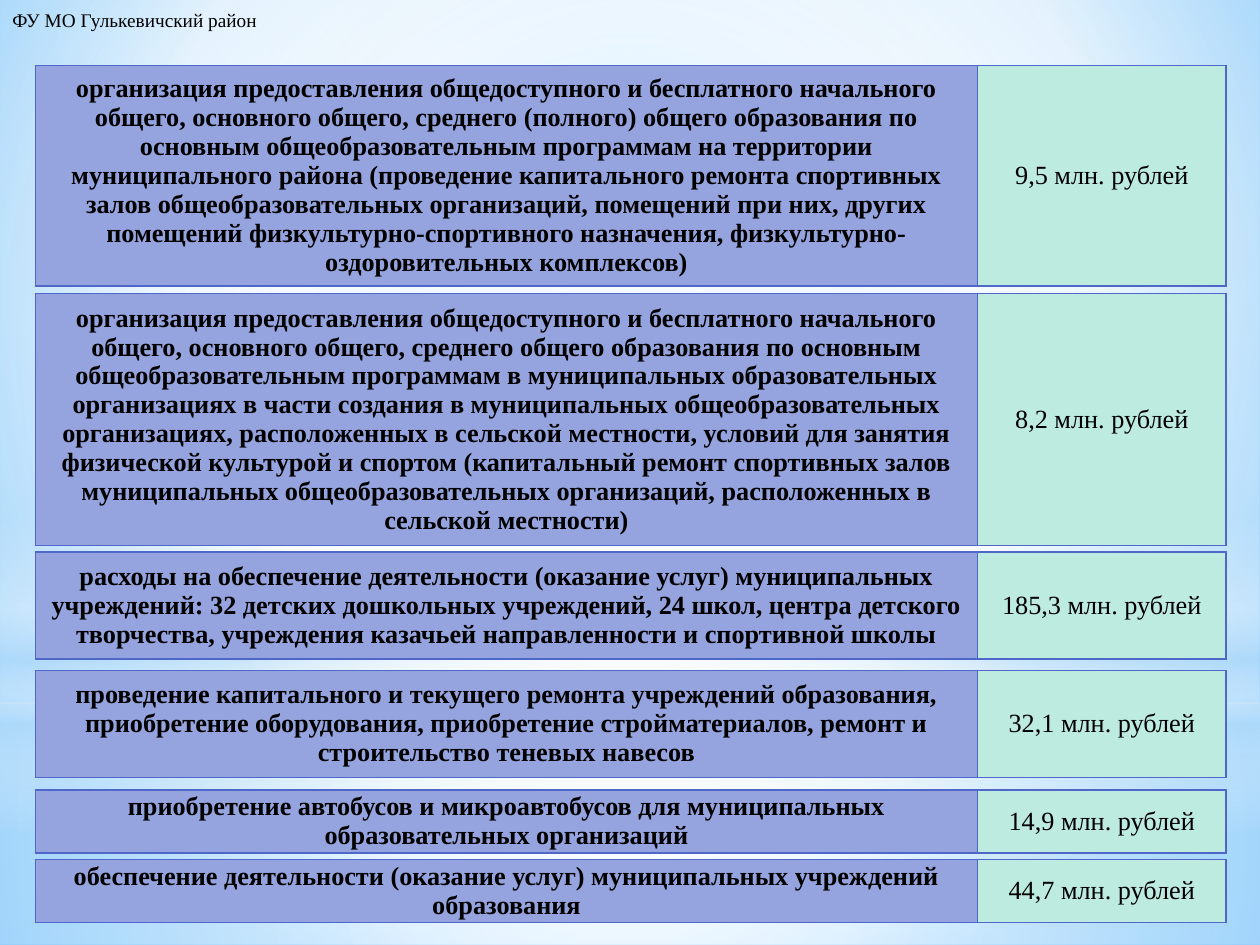
from dataclasses import dataclass

from lxml import etree
from pptx import Presentation
from pptx.dml.color import RGBColor
from pptx.enum.shapes import MSO_SHAPE
from pptx.enum.text import MSO_ANCHOR, MSO_AUTO_SIZE, PP_ALIGN
from pptx.oxml.ns import qn
from pptx.util import Inches, Pt

RECTANGLE, OVAL = MSO_SHAPE.RECTANGLE, MSO_SHAPE.OVAL
CENTER, MIDDLE = PP_ALIGN.CENTER, MSO_ANCHOR.MIDDLE
FIT_SHAPE = MSO_AUTO_SIZE.SHAPE_TO_FIT_TEXT
COLORS = {
    "white": "FFFFFF",
    "mist": "B4DCFA",
    "sky": "9ED5FF",
    "azure": "5BB9FF",
    "purpose": "95A4DE",
    "amount": "BEEBDF",
    "border": "4E67C8",
    "text": "000000",
}
FONT = "Times New Roman"
TABLE_LEFT = 0.28
COLUMN_WIDTHS = (7.48, 1.97)
TIGHT = (0.04, 0)
ROOMY = (0.1, 0.05)


@dataclass(frozen=True)
class Stop:
    position: int
    color: str
    opacity: int = 100


@dataclass(frozen=True)
class Glow:
    shape: int
    top: float
    height: float
    stops: tuple[Stop, ...]
    focus: tuple[int, ...] | None = (50, 50, 50, 50)


@dataclass(frozen=True)
class Expense:
    top: float
    height: float
    insets: tuple[float, float]
    purpose: str
    amount: str


PAGE_STOPS = (Stop(0, "sky"), Stop(60, "white"), Stop(100, "azure"))
PAGE_FOCUS = (20, 10, 20, 60)
GLOWS = (
    Glow(RECTANGLE, 5.58, 1.92,
         (Stop(0, "white", 91), Stop(37, "white", 76), Stop(100, "mist", 79))),
    Glow(RECTANGLE, 0, 5.58,
         (Stop(0, "white", 89), Stop(48, "white", 62), Stop(100, "mist", 79))),
    Glow(RECTANGLE, 4.12, 2.5,
         (Stop(0, "white", 0), Stop(29, "white", 30), Stop(45, "mist", 40),
          Stop(55, "white", 26), Stop(65, "mist", 60), Stop(100, "white", 0)), None),
    Glow(OVAL, 1.75, 5.58, (Stop(0, "white"), Stop(56, "white", 0))),
)
EXPENSES = (
    Expense(0.52, 1.75, TIGHT,
            "организация предоставления общедоступного и бесплатного начального "
            "общего, основного общего, среднего (полного) общего образования по "
            "основным общеобразовательным программам на территории муниципального "
            "района (проведение капитального ремонта спортивных залов "
            "общеобразовательных организаций, помещений при них, других помещений "
            "физкультурно-спортивного назначения, физкультурно-оздоровительных "
            "комплексов)", "9,5 млн. рублей"),
    Expense(2.33, 2, TIGHT,
            "организация предоставления общедоступного и бесплатного начального "
            "общего, основного общего, среднего общего образования по основным "
            "общеобразовательным программам в муниципальных образовательных "
            "организациях в части создания в муниципальных общеобразовательных "
            "организациях, расположенных в сельской местности, условий для занятия "
            "физической культурой и спортом (капитальный ремонт спортивных залов "
            "муниципальных общеобразовательных организаций, расположенных в "
            "сельской местности)", "8,2 млн. рублей"),
    Expense(4.38, 0.85, ROOMY,
            "расходы на обеспечение деятельности (оказание услуг) муниципальных "
            "учреждений: 32 детских дошкольных учреждений, 24 школ, центра детского "
            "творчества, учреждения казачьей направленности и спортивной школы",
            "185,3 млн. рублей"),
    Expense(5.32, 0.85, ROOMY,
            "проведение капитального и текущего ремонта учреждений образования, "
            "приобретение оборудования, приобретение стройматериалов, ремонт и "
            "строительство теневых навесов", "32,1 млн. рублей"),
    Expense(6.27, 0.5, TIGHT,
            "приобретение автобусов и микроавтобусов для муниципальных "
            "образовательных организаций", "14,9 млн. рублей"),
    Expense(6.82, 0.5, TIGHT,
            "обеспечение деятельности (оказание услуг) муниципальных учреждений "
            "образования", "44,7 млн. рублей"),
)


def rgb(name: str) -> RGBColor:
    return RGBColor.from_string(COLORS[name])


def set_gradient(properties, stops: tuple[Stop, ...], focus: tuple[int, ...] | None) -> None:
    gradient = etree.Element(qn("a:gradFill"), rotWithShape="1")
    stop_list = etree.SubElement(gradient, qn("a:gsLst"))
    for stop in stops:
        entry = etree.SubElement(stop_list, qn("a:gs"), pos=str(stop.position * 1000))
        color = etree.SubElement(entry, qn("a:srgbClr"), val=COLORS[stop.color])
        if stop.opacity < 100:
            etree.SubElement(color, qn("a:alpha"), val=str(stop.opacity * 1000))
    if focus:
        circle = etree.SubElement(gradient, qn("a:path"), {"path": "circle"})
        edges = {side: str(value * 1000) for side, value in zip("ltrb", focus)}
        etree.SubElement(circle, qn("a:fillToRect"), edges)
    else:
        etree.SubElement(gradient, qn("a:lin"), ang="5400000", scaled="0")
    properties.replace(properties.find(qn("a:solidFill")), gradient)


def draw_glow(page, glow: Glow) -> None:
    shape = page.shapes.add_shape(
        glow.shape, Inches(0), Inches(glow.top), Inches(10), Inches(glow.height))
    shape.shadow.inherit = False
    shape.line.fill.background()
    shape.fill.solid()
    set_gradient(shape.element.spPr, glow.stops, glow.focus)


def write(para, text: str, size: int, bold: bool) -> None:
    span = para.add_run()
    span.text = text
    for name, value in {"name": FONT, "size": Pt(size), "bold": bold}.items():
        setattr(span.font, name, value)
    span.font.color.rgb = rgb("text")


def add_borders(cell) -> None:
    properties = cell._tc.get_or_add_tcPr()
    for index, side in enumerate(("lnL", "lnR", "lnT", "lnB")):
        line = etree.Element(qn(f"a:{side}"), w=str(Pt(1)))
        fill = etree.SubElement(line, qn("a:solidFill"))
        etree.SubElement(fill, qn("a:srgbClr"), val=COLORS["border"])
        properties.insert(index, line)


def draw_expense(page, expense: Expense) -> None:
    table = page.shapes.add_table(
        1, 2, Inches(TABLE_LEFT), Inches(expense.top),
        Inches(sum(COLUMN_WIDTHS)), Inches(expense.height)).table
    table.first_row = table.horz_banding = False
    side, edge = map(Inches, expense.insets)
    layout = {"vertical_anchor": MIDDLE, "margin_left": side, "margin_right": side,
              "margin_top": edge, "margin_bottom": edge}
    for index, (width, kind) in enumerate(zip(COLUMN_WIDTHS, ("purpose", "amount"))):
        table.columns[index].width = Inches(width)
        cell = table.cell(0, index)
        for name, value in layout.items():
            setattr(cell, name, value)
        cell.fill.solid()
        cell.fill.fore_color.rgb = rgb(kind)
        add_borders(cell)
        para = cell.text_frame.paragraphs[0]
        para.alignment = CENTER
        write(para, getattr(expense, kind), 15, kind == "purpose")


def main() -> None:
    deck = Presentation()
    deck.slide_width, deck.slide_height = Inches(10), Inches(7.5)
    page = deck.slides.add_slide(deck.slide_layouts[6])
    page.background.fill.solid()
    set_gradient(page.element.find(f".//{qn('p:bgPr')}"), PAGE_STOPS, PAGE_FOCUS)
    for glow in GLOWS:
        draw_glow(page, glow)
    box = page.shapes.add_textbox(Inches(0), Inches(0.02), Inches(2.18), Inches(0.29))
    box.text_frame.word_wrap = False
    box.text_frame.auto_size = FIT_SHAPE
    write(box.text_frame.paragraphs[0], "ФУ МО Гулькевичский район", 11, False)
    for expense in EXPENSES:
        draw_expense(page, expense)
    deck.save("out.pptx")


if __name__ == "__main__":
    main()
